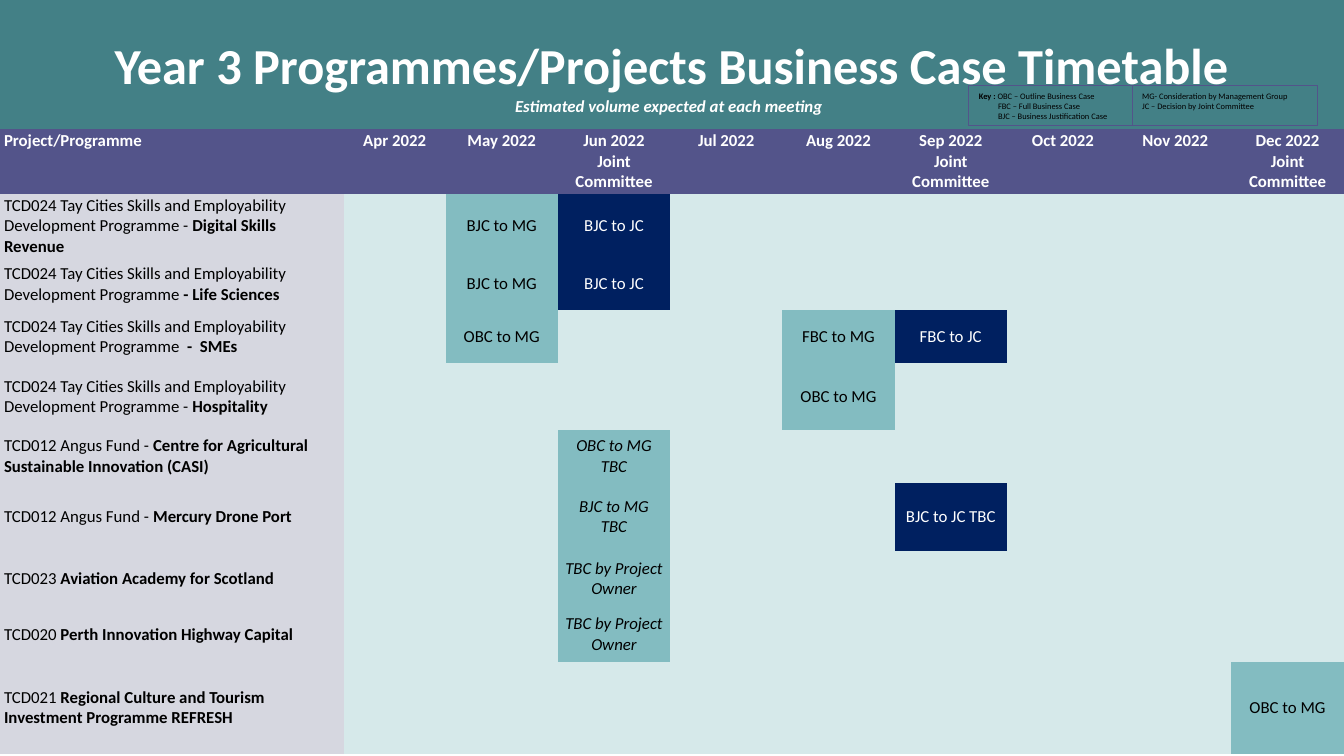
import pptx
import pptx.util
import pptx.dml.color
import pptx.enum.shapes
import pptx.enum.text
import pptx.oxml.ns

Inches = pptx.util.Inches
ALIGN = pptx.enum.text.PP_ALIGN
ANCHOR = pptx.enum.text.MSO_ANCHOR

TEAL, PURPLE, NAVY, AQUA = "438086", "53548A", "002060", "83BCC1"
PALE, LILAC, WHITE, BLACK = "D6E9EA", "D6D7E0", "FFFFFF", "000000"
NO_GRID_STYLE = "{2D5ABB26-0587-4C30-8999-92F81FD0307C}"
PAGE_WIDTH, PAGE_HEIGHT = 13.33, 7.5
BANNER_HEIGHT = 1.28

# Timetable: months, then project (plain part, bold part) and its meetings
MONTHS = ["Apr", "May", "Jun", "Jul", "Aug", "Sep", "Oct", "Nov", "Dec"]
COMMITTEE_MONTHS = {"Jun", "Sep", "Dec"}
SKILLS = "TCD024 Tay Cities Skills and Employability Development Programme "
PROJECTS = [
    (SKILLS + "- ", "Digital Skills Revenue", {"May": "BJC to MG", "Jun": "BJC to JC"}),
    (SKILLS, "- Life Sciences", {"May": "BJC to MG", "Jun": "BJC to JC"}),
    (SKILLS + " ", "-  SMEs", {"May": "OBC to MG", "Aug": "FBC to MG", "Sep": "FBC to JC"}),
    (SKILLS + "- ", "Hospitality", {"Aug": "OBC to MG"}),
    ("TCD012 Angus Fund - ", "Centre for Agricultural Sustainable Innovation (CASI)",
     {"Jun": "OBC to MG TBC"}),
    ("TCD012 Angus Fund - ", "Mercury Drone Port",
     {"Jun": "BJC to MG\nTBC", "Sep": "BJC to JC TBC"}),
    ("TCD023 ", "Aviation Academy for Scotland", {"Jun": "TBC by Project Owner"}),
    ("TCD020 ", "Perth Innovation Highway Capital", {"Jun": "TBC by Project Owner"}),
    ("TCD021 ", "Regional Culture and Tourism Investment Programme REFRESH",
     {"Dec": "OBC to MG"}),
]
ROW_HEIGHTS = [0.64, 0.64, 0.52, 0.52, 0.67, 0.52, 0.68, 0.55, 0.55, 0.91]
PROJECT_WIDTH, APRIL_WIDTH = 3.41, 1.01


def colour(value):
    return pptx.dml.color.RGBColor.from_string(value)


def add_span(para, text, size=12, color=BLACK, bold=False, italic=False):
    span = para.add_run()
    span.text = text
    span.font.name = "Calibri"
    span.font.size = pptx.util.Pt(size)
    span.font.color.rgb = colour(color)
    span.font.bold = bold
    span.font.italic = italic


def write(frame, text, align=ALIGN.LEFT, **style):
    """Write each line of text as a paragraph."""
    for number, line in enumerate(text.split("\n")):
        para = frame.add_paragraph() if number else frame.paragraphs[0]
        para.alignment = align
        add_span(para, line, **style)


class TimetablePage:
    def __init__(self, deck):
        self.page = deck.slides.add_slide(deck.slide_layouts[6])

    def box(self, left, top, width, height, fill=None, line=None, anchor=ANCHOR.TOP):
        shape = self.page.shapes.add_shape(
            pptx.enum.shapes.MSO_SHAPE.RECTANGLE,
            Inches(left), Inches(top), Inches(width), Inches(height))
        shape.shadow.inherit = False
        if fill:
            shape.fill.solid()
            shape.fill.fore_color.rgb = colour(fill)
        else:
            shape.fill.background()
        if line:
            shape.line.color.rgb = colour(line)
            shape.line.width = pptx.util.Pt(0.75)
        else:
            shape.line.fill.background()
        shape.text_frame.word_wrap = True
        shape.text_frame.vertical_anchor = anchor
        return shape.text_frame

    def label(self, left, top, width, height, text, **style):
        label = self.page.shapes.add_textbox(
            Inches(left), Inches(top), Inches(width), Inches(height))
        label.text_frame.word_wrap = False
        write(label.text_frame, text, **style)

    def table(self, top, widths, heights):
        frame = self.page.shapes.add_table(
            len(heights), len(widths), 0, Inches(top),
            Inches(sum(widths)), Inches(sum(heights)))
        table = frame.table
        style = table._tbl.tblPr.find(pptx.oxml.ns.qn("a:tableStyleId"))
        style.text = NO_GRID_STYLE
        table.horz_banding = False
        for column, width in zip(table.columns, widths):
            column.width = Inches(width)
        for row, height in zip(table.rows, heights):
            row.height = Inches(height)
        return table

    def cell(self, cell, fill, anchor=ANCHOR.MIDDLE):
        cell.fill.solid()
        cell.fill.fore_color.rgb = colour(fill)
        cell.margin_left = cell.margin_right = Inches(0.04)
        cell.margin_top = cell.margin_bottom = Inches(0.02)
        cell.vertical_anchor = anchor
        return cell.text_frame


def build_timetable(page):
    month_width = (PAGE_WIDTH - PROJECT_WIDTH - APRIL_WIDTH) / (len(MONTHS) - 1)
    widths = [PROJECT_WIDTH, APRIL_WIDTH] + [month_width] * (len(MONTHS) - 1)
    table = page.table(BANNER_HEIGHT, widths, ROW_HEIGHTS)

    # Header row
    heading = page.cell(table.cell(0, 0), PURPLE, ANCHOR.TOP)
    write(heading, "Project/Programme", color=WHITE, bold=True)
    for column, month in enumerate(MONTHS, 1):
        text = month + " 2022"
        if month in COMMITTEE_MONTHS:
            text += "\nJoint Committee"
        heading = page.cell(table.cell(0, column), PURPLE, ANCHOR.TOP)
        write(heading, text, ALIGN.CENTER, color=WHITE, bold=True)

    # Project rows: navy for committee decisions, aqua for other meetings
    for row, (plain, strong, meetings) in enumerate(PROJECTS, 1):
        name = page.cell(table.cell(row, 0), LILAC).paragraphs[0]
        add_span(name, plain)
        add_span(name, strong, bold=True)
        for column, month in enumerate(MONTHS, 1):
            text = meetings.get(month)
            if text is None:
                page.cell(table.cell(row, column), PALE)
                continue
            decision = "to JC" in text
            frame = page.cell(table.cell(row, column), NAVY if decision else AQUA)
            write(frame, text, ALIGN.CENTER, color=WHITE if decision else BLACK,
                  italic="TBC" in text and not decision)


def build_key(page):
    cases = page.box(9.61, 0.85, 1.62, 0.4, line=PURPLE)
    first = cases.paragraphs[0]
    first.alignment = ALIGN.LEFT
    add_span(first, "Key : ", size=6, bold=True)
    add_span(first, "OBC – Outline Business Case", size=6)
    for text in ("FBC – Full Business Case", "BJC – Business Justification Case"):
        para = cases.add_paragraph()
        para.alignment = ALIGN.LEFT
        para._p.get_or_add_pPr().set("marL", str(Inches(0.19)))
        add_span(para, text, size=6)
    meetings = page.box(11.23, 0.85, 1.84, 0.4, line=PURPLE)
    write(meetings, "MG- Consideration by Management Group\n"
                    "JC – Decision by Joint Committee", size=6)


def main():
    deck = pptx.Presentation()
    deck.slide_width, deck.slide_height = Inches(PAGE_WIDTH), Inches(PAGE_HEIGHT)
    page = TimetablePage(deck)

    # Banner
    banner = page.box(0, 0, PAGE_WIDTH, BANNER_HEIGHT, fill=TEAL, anchor=ANCHOR.MIDDLE)
    write(banner, "Year 3 Programmes/Projects Business Case Timetable",
          ALIGN.CENTER, size=36, color=WHITE, bold=True)
    page.label(5.01, 0.9, 3.31, 0.3, "Estimated volume expected at each meeting",
               color=WHITE, bold=True, italic=True)

    build_timetable(page)
    build_key(page)
    deck.save("out.pptx")


if __name__ == "__main__":
    main()
